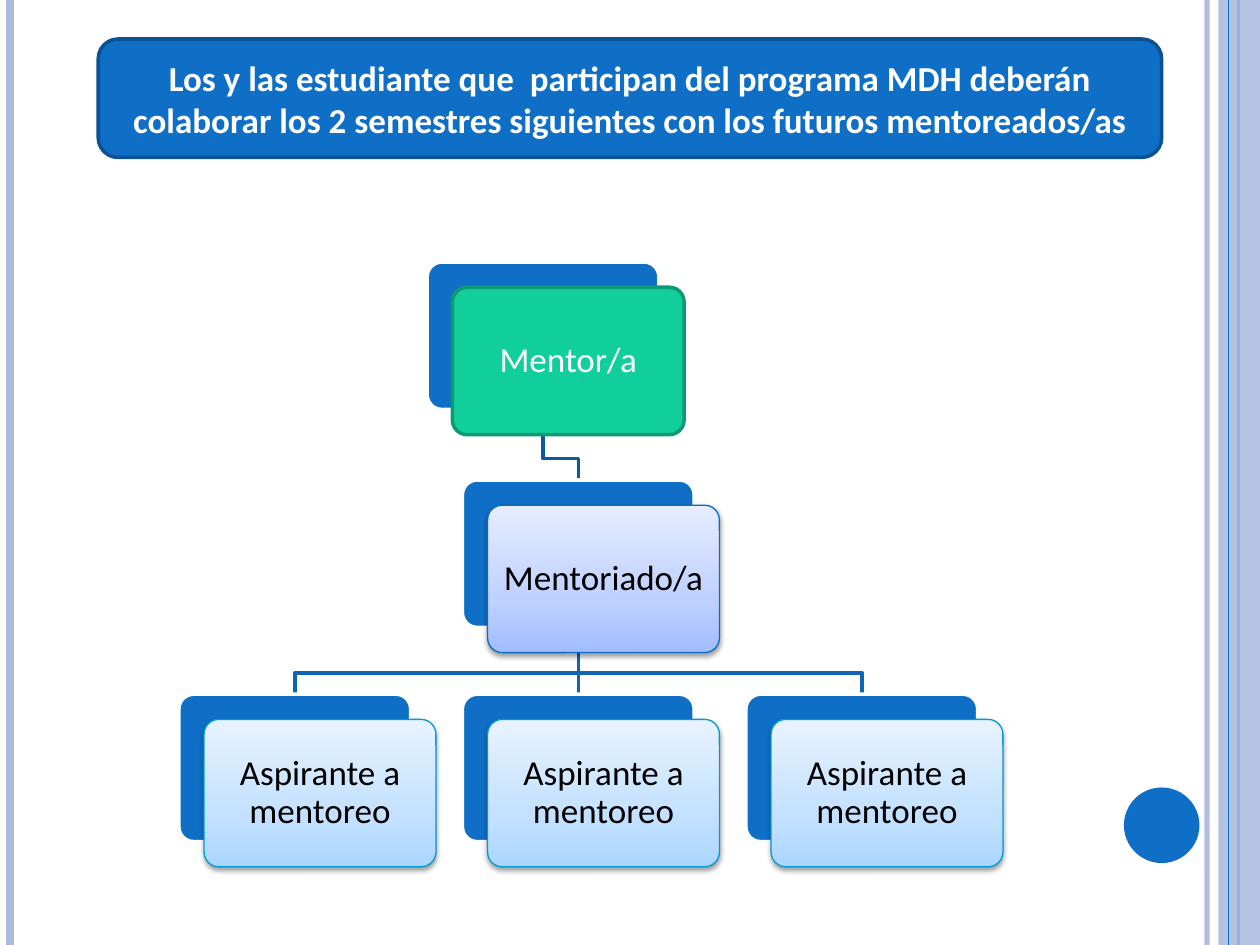
from lxml import etree
from pptx import Presentation
from pptx.dml.color import RGBColor
from pptx.enum import shapes, text
from pptx.oxml.ns import qn
from pptx.util import Inches, Pt

WHITE = RGBColor(0xFF, 0xFF, 0xFF)
BLACK = RGBColor(0, 0, 0)
BLUE = RGBColor(0x0F, 0x6F, 0xC6)
DARK_BLUE = RGBColor(0x0B, 0x52, 0x92)
PALE_BLUE = RGBColor(0xAB, 0xBB, 0xDF)
GREEN = RGBColor(0x10, 0xCF, 0x9B)
DARK_GREEN = RGBColor(0x0C, 0x99, 0x73)
TOP_LINK = RGBColor(0x0C, 0x59, 0x9F)
LOWER_LINK = RGBColor(0x0E, 0x65, 0xB4)
LAVENDER_EDGE = RGBColor(0x0A, 0x6D, 0xC6)
SKY_EDGE = RGBColor(0x00, 0x9A, 0xD4)
# Gradient stops: position in percent and colour, from bottom to top
LAVENDER = [(0, RGBColor(0xA3, 0xBD, 0xFF)), (35, RGBColor(0xBE, 0xD0, 0xFF)),
            (100, RGBColor(0xE6, 0xED, 0xFF))]
SKY = [(0, RGBColor(0xAB, 0xD6, 0xFF)), (35, RGBColor(0xC3, 0xE1, 0xFF)),
       (100, RGBColor(0xE8, 0xF3, 0xFF))]

FONT = "Calibri"
CARD_WIDTH, CARD_HEIGHT = 1.84, 1.17
CARD_SHIFT = 0.2


def add_alpha(color_parent, percent):
    color = color_parent.find(".//" + qn("a:srgbClr"))
    etree.SubElement(color, qn("a:alpha")).set("val", str(percent * 1000))


def add_box(slide, kind, box, fill=None, line=None, line_width=0.75):
    shape = slide.shapes.add_shape(kind, *map(Inches, box))
    shape.shadow.inherit = False
    if fill is not None:
        shape.fill.solid()
        shape.fill.fore_color.rgb = fill
    if line is None:
        shape.line.fill.background()
    else:
        shape.line.color.rgb = line
        shape.line.width = Pt(line_width)
    return shape


def add_line(slide, start, end, color, width):
    line = slide.shapes.add_connector(
        shapes.MSO_CONNECTOR.STRAIGHT, *map(Inches, start + end))
    line.line.color.rgb = color
    line.line.width = Pt(width)
    etree.SubElement(line._element.spPr, qn("a:effectLst"))
    return line


def write_text(shape, words, color, bold=False, spacing=1.0):
    frame = shape.text_frame
    frame.word_wrap = True
    frame.vertical_anchor = text.MSO_ANCHOR.MIDDLE
    paragraph = frame.paragraphs[0]
    paragraph.alignment = text.PP_ALIGN.CENTER
    paragraph.line_spacing = spacing
    run = paragraph.add_run()
    run.text = words
    run.font.name = FONT
    run.font.size = Pt(20)
    run.font.bold = bold
    run.font.color.rgb = color


def fill_gradient(shape, stops):
    shape.fill.gradient()
    shape.fill.gradient_angle = 90
    stop_list = shape._element.spPr.find(".//" + qn("a:gsLst"))
    stop_list.clear()
    for position, color in stops:
        stop = etree.SubElement(stop_list, qn("a:gs"), pos=str(position * 1000))
        etree.SubElement(stop, qn("a:srgbClr"), val=str(color))


def add_shadow(shape):
    effects = shape._element.spPr.find(qn("a:effectLst"))
    shadow = etree.SubElement(
        effects, qn("a:outerShdw"), blurRad=str(Pt(3.1)), dist=str(Pt(1.6)),
        dir="5400000", rotWithShape="0")
    etree.SubElement(shadow, qn("a:srgbClr"), val=str(BLACK))
    add_alpha(shadow, 38)


def add_frame(slide, width, height):
    """Vertical stripes at both edges and the round badge."""
    def stripe(x, color, line_width):
        return add_line(slide, (x, 0), (x, height), color, line_width)

    inner = stripe(width - 0.42, PALE_BLUE, 3)
    add_alpha(inner._element.spPr, 93)
    stripe(0.08, PALE_BLUE, 4.5)
    stripe(width - 0.17, BLUE, 1.5)
    band = add_box(slide, shapes.MSO_SHAPE.RECTANGLE,
                   (width - 0.33, 0, 0.33, height), PALE_BLUE)
    add_alpha(band._element.spPr, 87)
    stripe(width - 0.25, BLUE, 0.75)
    add_box(slide, shapes.MSO_SHAPE.OVAL, (8.92, 6.25, 0.6, 0.6), BLUE)


def add_elbow(slide, start, end, color):
    """Bent link that turns 0.17 inches above its end."""
    (x1, y1), (x2, y2) = start, end
    bend = y2 - 0.17
    builder = slide.shapes.build_freeform(Inches(x1), Inches(y1))
    builder.add_line_segments(
        [(Inches(x), Inches(y)) for x, y in [(x1, bend), (x2, bend), (x2, y2)]],
        close=False)
    shape = builder.convert_to_shape()
    shape.shadow.inherit = False
    shape.fill.background()
    shape.line.color.rgb = color
    shape.line.width = Pt(2)


def add_card(slide, left, top, words, fill, edge):
    """Blue back plate with a labelled card in front; returns the plate."""
    rounded = shapes.MSO_SHAPE.ROUNDED_RECTANGLE
    plate = add_box(slide, rounded, (left, top, CARD_WIDTH, CARD_HEIGHT),
                    BLUE, WHITE, 2)
    box = (left + CARD_SHIFT, top + CARD_SHIFT, CARD_WIDTH, CARD_HEIGHT)
    if isinstance(fill, list):
        card = add_box(slide, rounded, box, line=edge)
        fill_gradient(card, fill)
        add_shadow(card)
        color = BLACK
    else:
        card = add_box(slide, rounded, box, fill, edge, 2)
        color = WHITE
    for shape in (plate, card):
        shape.adjustments[0] = 0.1
    frame = card.text_frame
    frame.margin_left = frame.margin_right = Inches(0.04)
    write_text(card, words, color, spacing=0.9)
    return plate


def add_hierarchy(slide, left, top):
    """Mentor, mentee and three applicants, linked from top to bottom."""
    pitch = 2.25
    columns = [left + pitch * i for i in range(3)]
    middle = columns[1]
    mentor_left = middle - 0.28
    mentee_top, applicant_top = top + 1.73, top + 3.43
    half = CARD_WIDTH / 2
    fork = (middle + half, mentee_top + CARD_HEIGHT)

    # Links lie behind the cards
    for column in (columns[2], columns[0]):
        add_elbow(slide, fork, (column + half, applicant_top), LOWER_LINK)
    trunk = add_line(slide, fork, (fork[0], applicant_top), LOWER_LINK, 2)
    add_elbow(slide, (mentor_left + half, top + CARD_HEIGHT),
              (fork[0], mentee_top), TOP_LINK)

    # Cards
    add_card(slide, mentor_left, top, "Mentor/a", GREEN, DARK_GREEN)
    mentee = add_card(slide, middle, mentee_top, "Mentoriado/a",
                      LAVENDER, LAVENDER_EDGE)
    applicants = [add_card(slide, column, applicant_top,
                           "Aspirante a mentoreo", SKY, SKY_EDGE)
                  for column in columns]
    trunk.begin_connect(mentee, 2)
    trunk.end_connect(applicants[1], 0)


def add_title(slide, box):
    title = add_box(slide, shapes.MSO_SHAPE.ROUNDED_RECTANGLE, box,
                    BLUE, DARK_BLUE, 2)
    write_text(title, "Los y las estudiante que  participan del programa MDH "
               "deberán colaborar los 2 semestres siguientes con los futuros "
               "mentoreados/as", WHITE, bold=True)


def main():
    presentation = Presentation()
    presentation.slide_width = Inches(10)
    presentation.slide_height = Inches(7.5)
    slide = presentation.slides.add_slide(presentation.slide_layouts[6])
    add_frame(slide, 10, 7.5)
    add_hierarchy(slide, 1.42, 2.08)
    add_title(slide, (0.78, 0.31, 8.44, 0.94))
    presentation.save("out.pptx")


if __name__ == "__main__":
    main()
